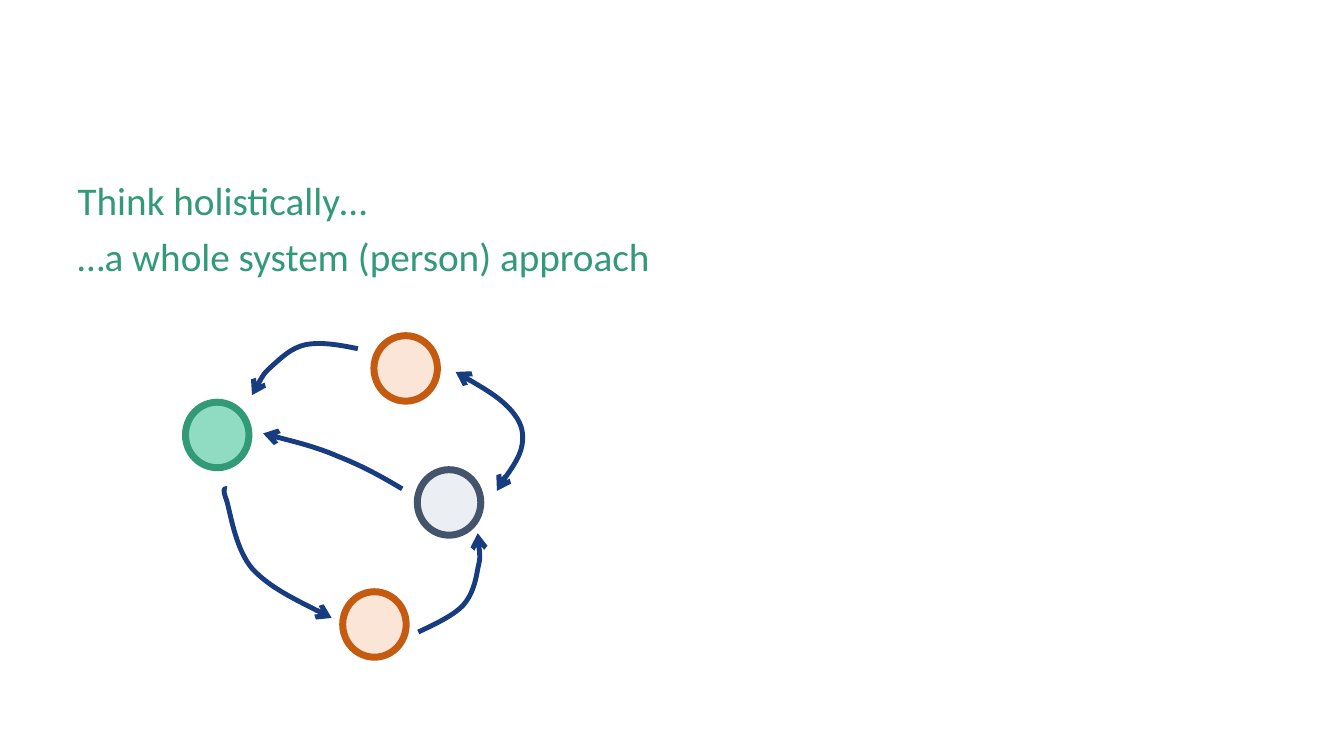
from lxml.etree import SubElement
from pptx import Presentation
from pptx.dml.color import RGBColor
from pptx.enum.shapes import MSO_SHAPE
from pptx.enum.text import MSO_AUTO_SIZE, MSO_ANCHOR
from pptx.oxml.ns import qn
from pptx.util import Inches, Pt

CELL = Inches(0.1)  # grid unit for every place and size on the page
COLUMNS, ROWS = 133.33, 75
NODE_SIZE = (6.3, 6.5)

COLORS = {
    "heading": "329A77",
    "mint": "90DCC3",
    "peach": "FBE5D6",
    "orange": "C55A11",
    "mist": "EBEEF2",
    "slate": "44546A",
    "arrow": "173C80",
}

LINES = ["Think holistically…", "…a whole system (person) approach"]

# column, row, fill, outline
NODES = [
    (18.4, 39.9, "mint", "heading"),
    (37.1, 33.3, "peach", "orange"),
    (41.4, 46.6, "mist", "slate"),
    (34, 58.7, "peach", "orange"),
]

# Start point, then two handles and an end point for each curve piece
LEFT_TO_BOTTOM = [
    (22.5, 48.5),
    (22.3, 48.4), (22, 48.4), (22.5, 49.7),
    (22.9, 51.1), (23.4, 54.6), (25.1, 56.5),
    (26.9, 58.4), (32.9, 61.3), (32.9, 61.3),
]
TOP_TO_RIGHT = [
    (45.2, 36.9),
    (47.3, 38.1), (49.5, 39.4), (50.6, 40.6),
    (51.7, 41.8), (52, 42.8), (51.8, 44.1),
    (51.6, 45.5), (49.8, 47.7), (49.4, 48.5),
    (49, 49.3), (49.2, 49), (49.3, 48.7),
]
RIGHT_TO_LEFT = [
    (39.9, 48.5),
    (37.9, 47.3), (35.9, 46.2), (33.6, 45.3),
    (31.3, 44.3), (26.1, 43), (26.1, 43),
]
TOP_TO_LEFT = [
    (35.5, 34.6),
    (33.6, 34.2), (31.8, 33.9), (30.3, 34.2),
    (28.9, 34.5), (27.9, 35.5), (27, 36.3),
    (26.1, 37.1), (25.5, 38.2), (25, 39.2),
]
BOTTOM_TO_RIGHT = [
    (41.5, 62.7),
    (43.2, 61.9), (44.9, 61.1), (45.9, 60.1),
    (46.9, 59), (47.2, 57.6), (47.4, 56.4),
    (47.7, 55.2), (47.5, 54), (47.4, 52.9),
]


def cells(*counts):
    return [round(count * CELL) for count in counts]


def color(name):
    return RGBColor.from_string(COLORS[name])


def fill_body(page):
    body = page.placeholders[1]
    body.left, body.top, body.width, body.height = cells(6.7, 17.5, 122.6, 47.9)
    frame = body.text_frame
    frame.text = "\n".join(LINES)
    frame.word_wrap = True
    frame.auto_size = MSO_AUTO_SIZE.NONE
    frame.vertical_anchor = MSO_ANCHOR.TOP
    for index, paragraph in enumerate(frame.paragraphs):
        properties = paragraph._p.get_or_add_pPr()
        properties.set("marL", "0")
        properties.set("indent", "0")
        SubElement(properties, qn("a:buNone"))
        paragraph.line_spacing = 0.9
        paragraph.space_before = Pt(10 if index else 0)
        for span in paragraph.runs:
            span.font.name = "Calibri"
            span.font.size = Pt(28)
            span.font.color.rgb = color("heading")


def add_node(page, column, row, fill, outline):
    node = page.shapes.add_shape(MSO_SHAPE.OVAL, *cells(column, row, *NODE_SIZE))
    node.shadow.inherit = False
    node.fill.solid()
    node.fill.fore_color.rgb = color(fill)
    node.line.color.rgb = color(outline)
    node.line.width = Pt(5)


def bend(shape):
    """Turn each three straight pieces of the outline into one Bézier piece."""
    outline = shape._element.find(".//" + qn("a:path"))
    pieces = outline.findall(qn("a:lnTo"))
    for first in range(0, len(pieces), 3):
        curve = SubElement(outline, qn("a:cubicBezTo"))
        for piece in pieces[first:first + 3]:
            curve.append(piece[0])
            outline.remove(piece)


def add_arrow(page, points, ends=("tailEnd",)):
    start, *others = [cells(*point) for point in points]
    builder = page.shapes.build_freeform(*start, scale=1.0)
    builder.add_line_segments(others, close=False)
    arrow = builder.convert_to_shape()
    bend(arrow)
    arrow.shadow.inherit = False
    arrow.fill.background()
    arrow.line.color.rgb = color("arrow")
    arrow.line.width = Pt(3.5)
    for end in ends:
        SubElement(arrow.line._get_or_add_ln(), qn("a:" + end), type="arrow")


def main():
    deck = Presentation()
    deck.slide_width, deck.slide_height = cells(COLUMNS, ROWS)
    page = deck.slides.add_slide(deck.slide_layouts[1])
    title = page.shapes.title._element
    title.getparent().remove(title)
    fill_body(page)
    for node in NODES:
        add_node(page, *node)
    add_arrow(page, LEFT_TO_BOTTOM)
    add_arrow(page, TOP_TO_RIGHT, ends=("headEnd", "tailEnd"))
    for points in (RIGHT_TO_LEFT, TOP_TO_LEFT, BOTTOM_TO_RIGHT):
        add_arrow(page, points)
    deck.save("out.pptx")


if __name__ == "__main__":
    main()
